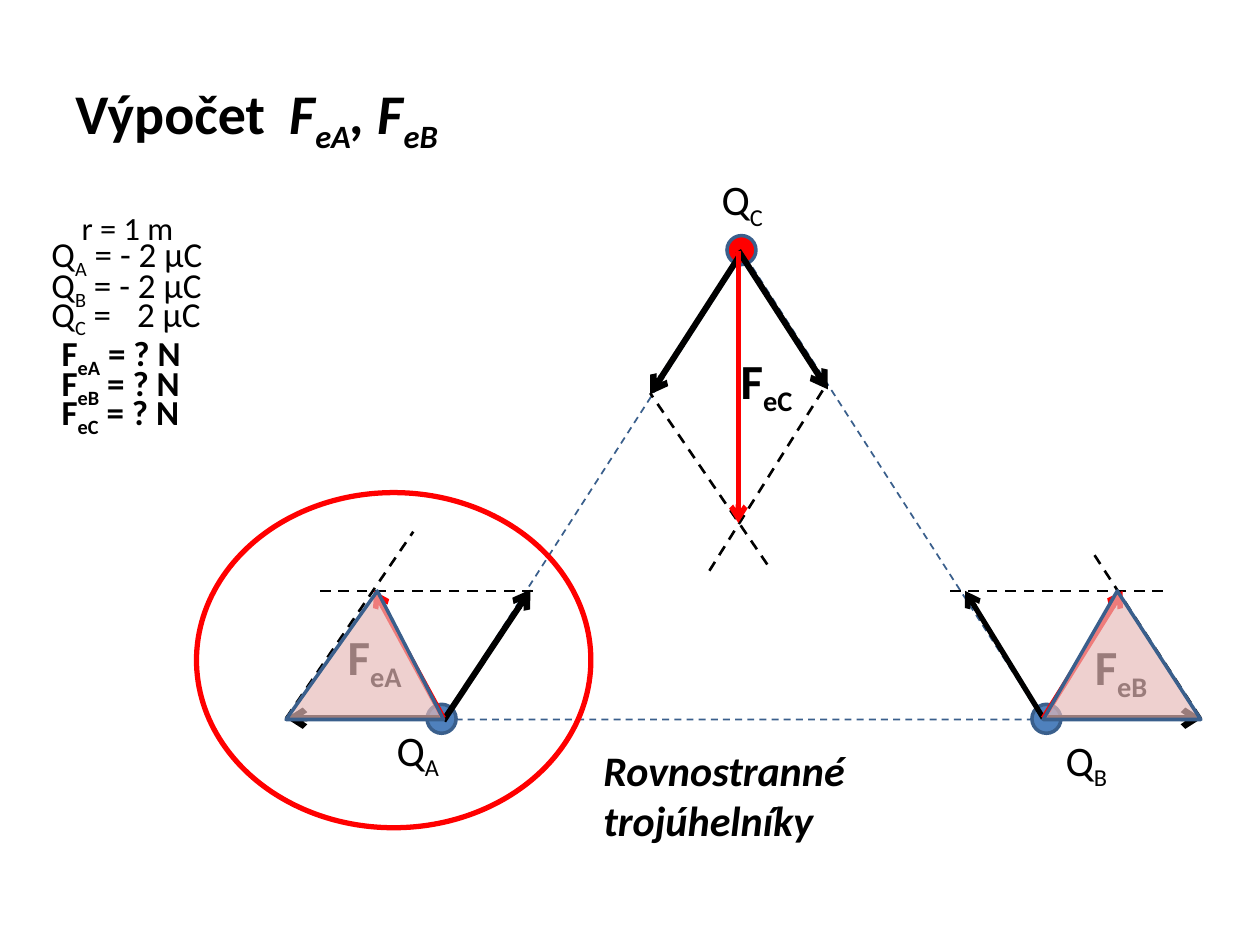
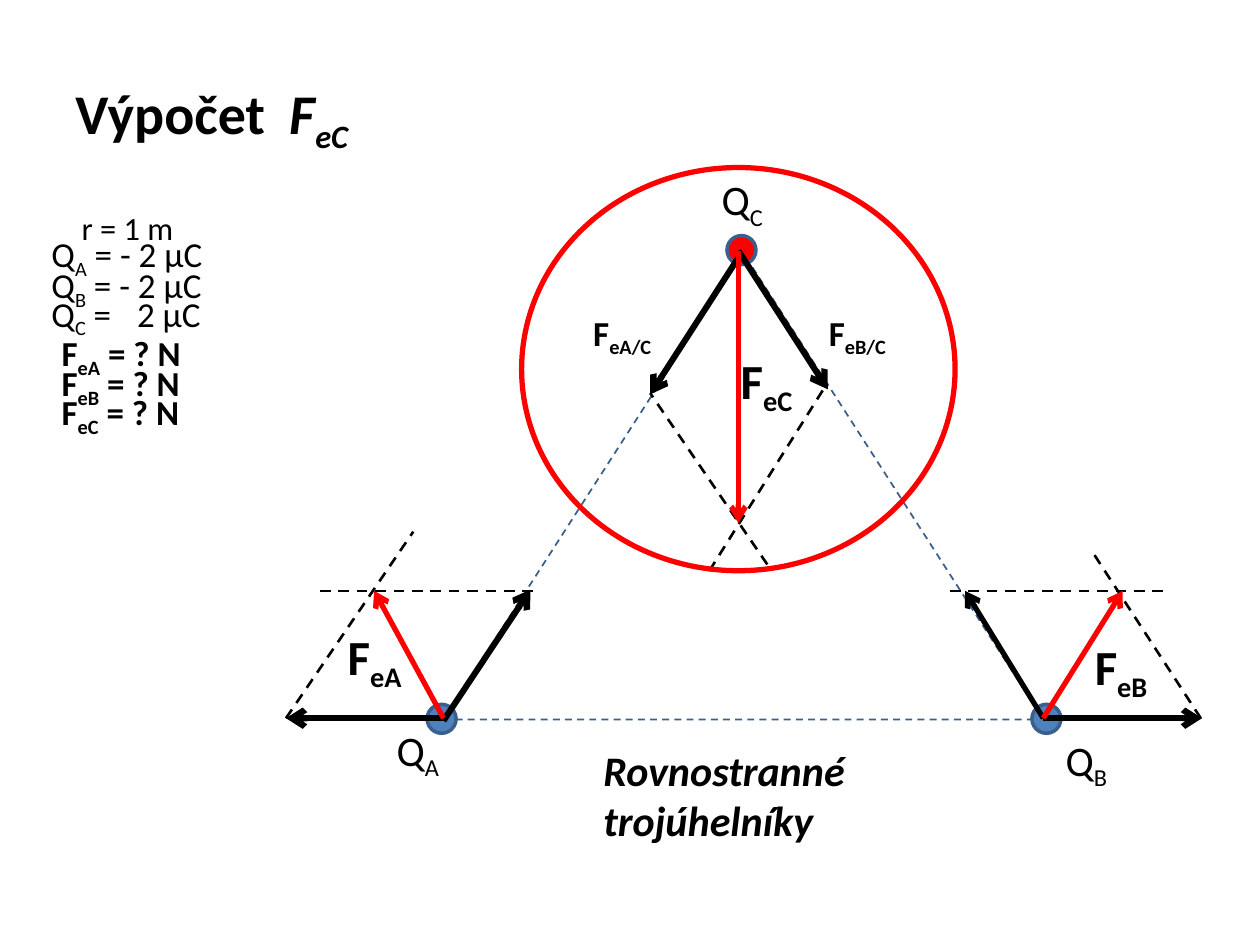
from pptx import Presentation
from pptx.dml.color import RGBColor
from pptx.enum.dml import MSO_LINE
from pptx.enum.shapes import MSO_CONNECTOR, MSO_SHAPE
from pptx.enum.text import MSO_ANCHOR
from pptx.oxml.ns import qn
from pptx.oxml.xmlchemy import OxmlElement
from pptx.util import Pt

PX = 9144  # 100 px to the inch
FONT = "Calibri"
DASH = MSO_LINE.DASH
LINE = MSO_CONNECTOR.STRAIGHT
OVAL = MSO_SHAPE.OVAL
TRI = MSO_SHAPE.ISOSCELES_TRIANGLE
MIDDLE = MSO_ANCHOR.MIDDLE

COLORS = {
    "black": "000000",
    "red": "FF0000",
    "blue": "4F81BD",
    "edge": "3A5F8C",
    "pink": "E6B9B8",
}

# Start x, start y, end x, end y, width in points
FORCES = [
    (352, 572, 421, 468, 3.5),
    (587, 203, 516, 313, 3.5),
    (828, 570, 766, 469, 3),
    (586, 199, 657, 309, 3.5),
    (353, 570, 227, 570, 3.5),
    (828, 570, 954, 570, 3.5),
]
GUIDES = [
    (227, 570, 328, 422),
    (423, 469, 250, 469),
    (923, 469, 750, 469),
    (953, 570, 867, 438),
    (609, 448, 516, 312),
    (563, 453, 656, 305),
]
SUMS = [
    (586, 199, 586, 415),
    (352, 570, 297, 469),
    (828, 570, 891, 469),
]


def emu(*sizes):
    return [size * PX for size in sizes]


def rgb(name):
    return RGBColor.from_string(COLORS[name])


def stroke(line, color, width, dash=None):
    line.color.rgb = rgb(color)
    line.width = Pt(width)
    if dash:
        line.dash_style = dash


def shape(slide, kind, box, color, width, fill=None, dash=None):
    item = slide.shapes.add_shape(kind, *emu(*box))
    item.shadow.inherit = False
    if fill:
        item.fill.solid()
        item.fill.fore_color.rgb = rgb(fill)
    else:
        item.fill.background()
    stroke(item.line, color, width, dash)
    return item


def fade(item, percent):
    """Make a solid fill partly opaque."""
    alpha = OxmlElement("a:alpha")
    alpha.set("val", str(percent * 1000))
    item.element.spPr.find(qn("a:solidFill"))[0].append(alpha)


def wire(slide, ends, color, width, dash=None, arrow=False):
    item = slide.shapes.add_connector(LINE, *emu(*ends))
    stroke(item.line, color, width, dash)
    props = item.element.spPr
    if arrow:
        tip = OxmlElement("a:tailEnd")
        tip.set("type", "arrow")
        props.find(qn("a:ln")).append(tip)
    props.append(OxmlElement("a:effectLst"))


def text(slide, box, words, size, bold=False, italic=False, tab=None):
    """Add one paragraph; every second part between bars is a subscript."""
    frame = slide.shapes.add_textbox(*emu(*box)).text_frame
    frame.word_wrap = True
    para = frame.paragraphs[0]
    for index, part in enumerate(words.split("|")):
        if part:
            run = para.add_run()
            run.text = part
            if index % 2:
                run._r.get_or_add_rPr().set("baseline", "-25000")
    if tab:
        stops = OxmlElement("a:tabLst")
        stop = OxmlElement("a:tab")
        stop.set("pos", str(tab * PX))
        stop.set("algn", "l")
        stops.append(stop)
        para._p.get_or_add_pPr().append(stops)
    font = para.font
    font.name, font.size = FONT, Pt(size)
    font.bold, font.italic = bold, italic
    font.color.rgb = rgb("black")
    return frame


def title(slide, words):
    frame = text(slide, (50, 30, 900, 125), "Výpočet\t||" + words, 32,
                 bold=True, italic=True, tab=170)
    frame.vertical_anchor = MIDDLE
    frame.paragraphs[0].runs[0].font.italic = False


def charges(slide):
    shape(slide, TRI, (352, 201, 476, 370), "edge", 1, dash=DASH)
    for x, y, fill in [(339, 559, "blue"), (819, 559, "blue"),
                       (577, 187, "red")]:
        shape(slide, OVAL, (x, y, 23, 23), "edge", 2, fill)
    for x, y, name in [(305, 570, "A"), (836, 578, "B"), (563, 133, "C")]:
        text(slide, (x, y, 63, 74), f"Q|{name}", 24)


def forces(slide):
    for *ends, width in FORCES:
        wire(slide, ends, "black", width, arrow=True)
    for ends in GUIDES:
        wire(slide, ends, "black", 1.5, DASH)
    for ends in SUMS:
        wire(slide, ends, "red", 3, arrow=True)
    for x, y, name in [(578, 273, "C"), (859, 500, "B"), (266, 492, "A")]:
        text(slide, (x, y, 82, 74), f"F|e{name}", 28, bold=True)
    text(slide, (469, 586, 266, 91), "Rovnostranné trojúhelníky", 24,
         bold=True, italic=True)


def givens(slide):
    radius = text(slide, (55, 164, 270, 39), "r = 1 m", 18.5)
    radius.paragraphs[0].line_spacing = 0.9
    values = [("A", " - 2"), ("B", " - 2"), ("C", "\t2")]
    for row, (name, value) in enumerate(values):
        drop = round(23.5 * row)
        text(slide, (31, 180 + drop, 270, 74), f"Q|{name}| ={value} µC", 20,
             tab=68 if "\t" in value else None)
        text(slide, (39, 258 + drop, 305, 74), f"F|e{name}| = ? N", 20,
             bold=True)


def scene(deck, words):
    slide = deck.slides.add_slide(deck.slide_layouts[6])
    charges(slide)
    forces(slide)
    title(slide, words)
    givens(slide)
    return slide


def ring(slide, box):
    shape(slide, OVAL, box, "red", 3)


def main():
    deck = Presentation()
    deck.slide_width, deck.slide_height = emu(1000, 750)

    slide = scene(deck, "F|eA|, F|eB")
    for x, peak in [(227, 0.58), (828, 0.47)]:
        half = shape(slide, TRI, (x, 469, 125, 102), "edge", 2, "pink")
        half.adjustments[0] = peak
        fade(half, 67)
    ring(slide, (156, 391, 313, 266))

    slide = scene(deck, "F|eC")
    ring(slide, (414, 133, 344, 320))
    for x, name in [(648, "B"), (461, "A")]:
        text(slide, (x, 242, 94, 74), f"F|e{name}/C", 20, bold=True)

    deck.save("out.pptx")


if __name__ == "__main__":
    main()
